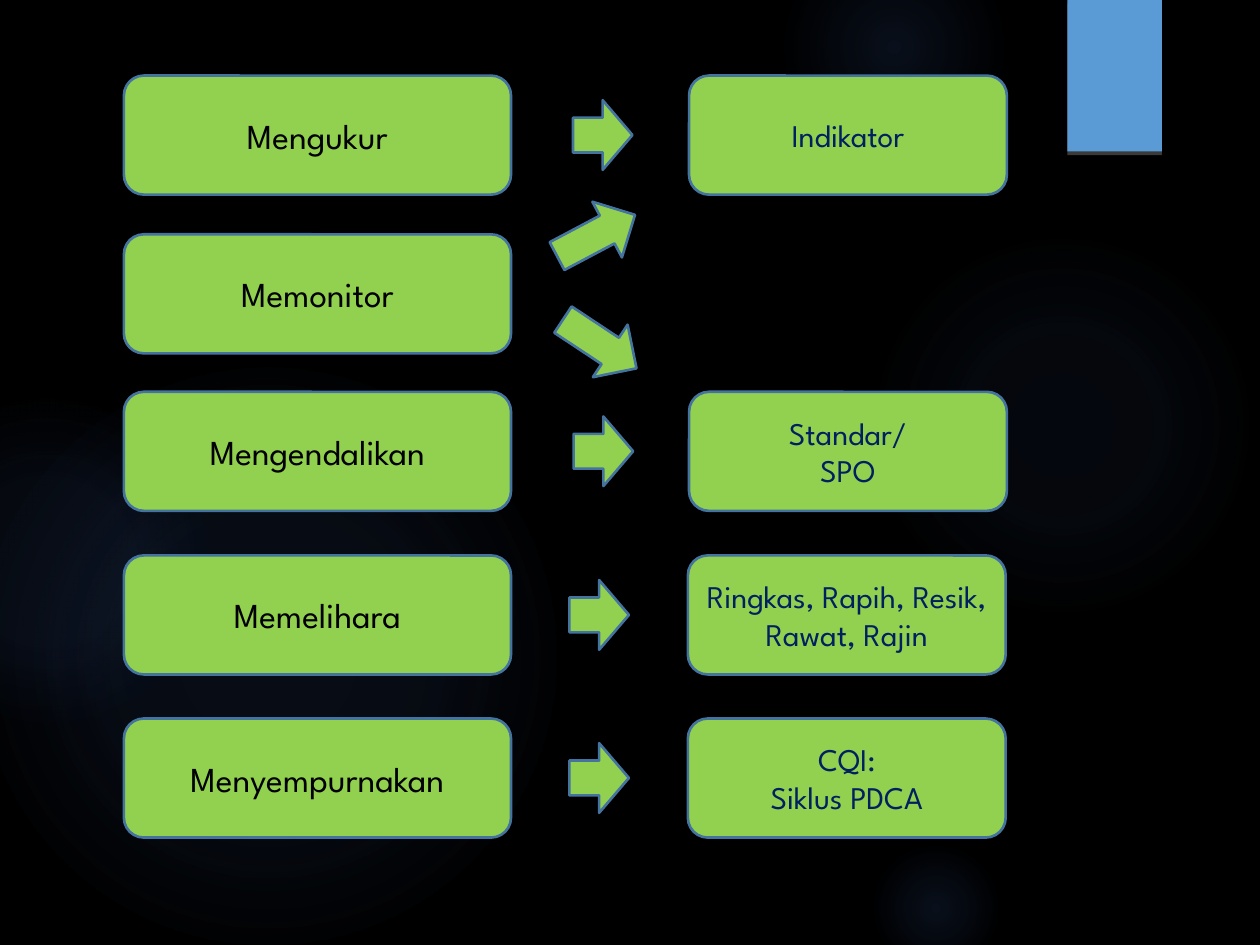
from dataclasses import dataclass

from pptx import Presentation
from pptx.dml.color import RGBColor as RGB
from pptx.enum.shapes import MSO_SHAPE as Form
from pptx.enum.text import MSO_ANCHOR as Anchor, PP_ALIGN as Align
from pptx.oxml import parse_xml
from pptx.oxml.ns import nsdecls
from pptx.util import Pt


@dataclass(frozen=True)
class Theme:
    back: str = "000000"
    glow: str = "4472C4"
    tab: str = "5B9BD5"
    shade: str = "808080"
    fill: str = "92D050"
    line: str = "43739E"
    task: str = "000000"
    tool: str = "002060"
    font: str = "League Spartan"
    large: int = 20
    small: int = 18
    edge: float = 1.5


theme = Theme()


def draw(form, left, top, width, height, fill=theme.fill):
    shape = slide.shapes.add_shape(form, Pt(left), Pt(top), Pt(width), Pt(height))
    shape.shadow.inherit = False
    shape.fill.solid()
    shape.fill.fore_color.rgb = RGB.from_string(fill)
    if fill == theme.fill:
        shape.line.color.rgb = RGB.from_string(theme.line)
        shape.line.width = Pt(theme.edge)
    else:
        shape.line.fill.background()
    return shape


def label(shape, text, size, color):
    frame = shape.text_frame
    frame.word_wrap = True
    frame.vertical_anchor = Anchor.MIDDLE
    frame.text = text
    for para in frame.paragraphs:
        para.alignment = Align.CENTER
        para.font.name = theme.font
        para.font.size = Pt(size)
        para.font.color.rgb = RGB.from_string(color)


deck = Presentation()
deck.slide_width, deck.slide_height = Pt(720), Pt(540)
slide = deck.slides.add_slide(deck.slide_layouts[6])
slide.background.fill.solid()
slide.background.fill.fore_color.rgb = RGB.from_string(theme.back)

glows = [
    (496, 132, 222, [(0, 7), (36, 6), (69, 0)]),
    (448, -36, 126, [(0, 14), (36, 7), (73, 0)]),
    (496, 480, 78, [(0, 14), (36, 7), (66, 0)]),
    (-12, 210, 330, [(0, 11), (36, 10), (75, 0)]),
    (-66, 228, 186, [(0, 8), (36, 8), (72, 0)]),
]
for left, top, size, stops in glows:
    glow = draw(Form.OVAL, left, top, size, size, theme.glow)
    marks = "".join(
        f'<a:gs pos="{pos * 1000}"><a:srgbClr val="{theme.glow}">'
        f'<a:alpha val="{alpha * 1000}"/></a:srgbClr></a:gs>'
        for pos, alpha in stops
    )
    grad = parse_xml(
        f'<a:gradFill {nsdecls("a")} rotWithShape="1"><a:gsLst>{marks}</a:gsLst>'
        '<a:path path="circle"><a:fillToRect l="50000" t="50000" r="50000" b="50000"/>'
        "</a:path></a:gradFill>"
    )
    props = glow.element.spPr
    props.replace(props.solidFill, grad)

tab = draw(Form.RECTANGLE, 609.9, 0, 54, 86.6, theme.tab)
effect = tab.element.spPr.find("{*}effectLst")
effect.append(parse_xml(
    f'<a:outerShdw {nsdecls("a")} blurRad="0" dist="{Pt(2)}" dir="5400000" '
    f'algn="ctr" rotWithShape="0"><a:srgbClr val="{theme.shade}">'
    '<a:alpha val="45000"/></a:srgbClr></a:outerShdw>'
))

rows = [
    (43.2, "Mengukur", "Indikator", 393.8, 327.4),
    (133.9, "Memonitor", None, None, None),
    (223.9, "Mengendalikan", "Standar/\nSPO", 393.8, 327.8),
    (317.4, "Memelihara", "Ringkas, Rapih, Resik, Rawat, Rajin", 393.1, 325.4),
    (410.6, "Menyempurnakan", "CQI:\nSiklus PDCA", 393.1, 325.4),
]
high, wide, tall = 68, 34, 39.8
for top, task, tool, left, tip in rows:
    label(draw(Form.ROUNDED_RECTANGLE, 70.8, top, 221.2, high), task, theme.large, theme.task)
    if tool:
        label(draw(Form.ROUNDED_RECTANGLE, left, top, 181.6, high), tool, theme.small, theme.tool)
        draw(Form.RIGHT_ARROW, tip, top + (high - tall) / 2, wide, tall)

for left, top, turn in [(315.4, 116.6, 332.1), (317.5, 178.6, 33.5)]:
    draw(Form.RIGHT_ARROW, left, top, 50.4, 36).rotation = turn

deck.save("out.pptx")
